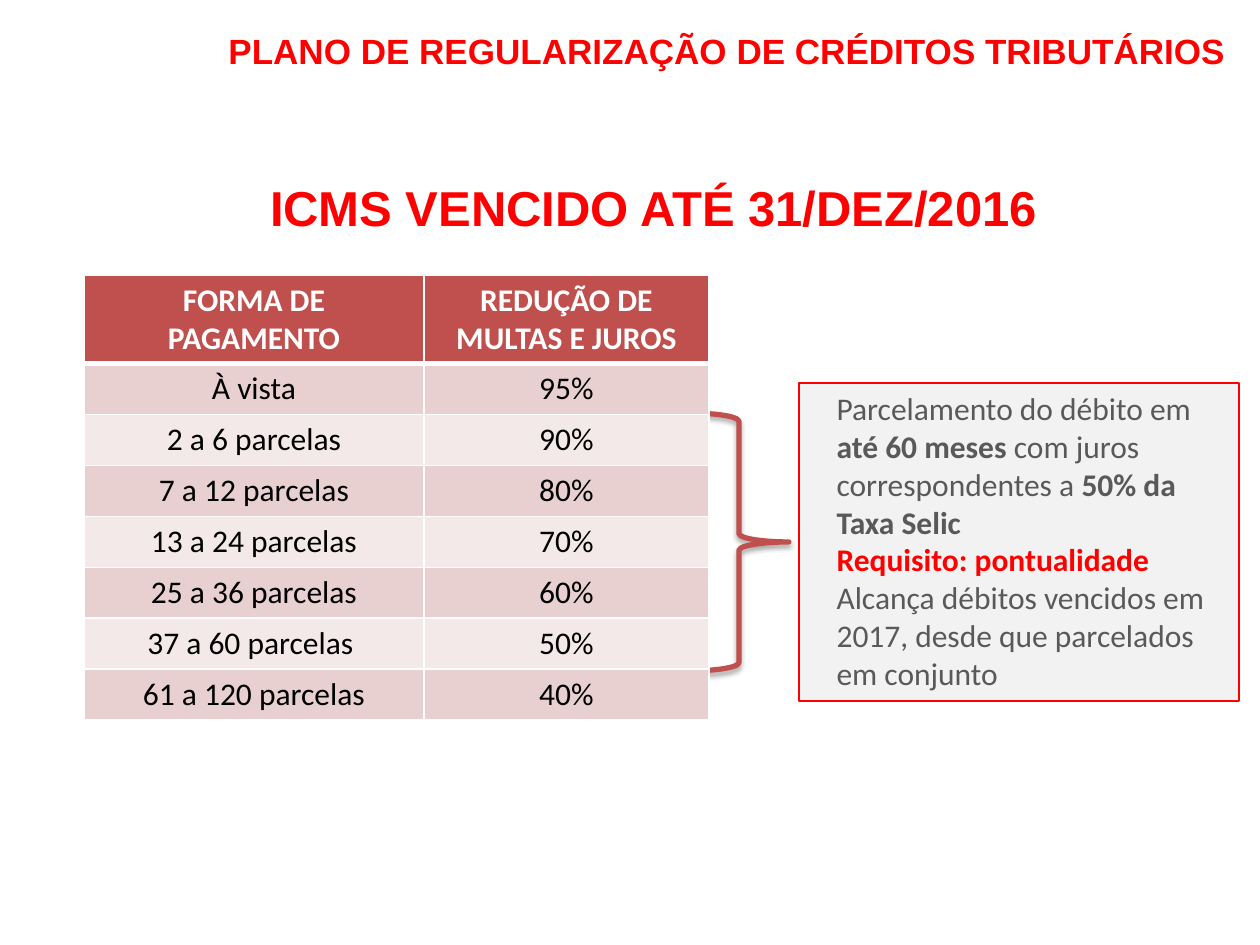
from lxml import etree
from pptx import Presentation
from pptx import util as u
from pptx.dml.color import RGBColor
from pptx.enum import shapes, text
from pptx.oxml import ns

PX = u.Inches(1) // 126
RED, BRICK, WHITE, BLACK, GREY = "FF0000", "C0504D", "FFFFFF", "000000", "595959"
BANDS = ("E8D0D0", "F4E9E9")
HEADERS = ("FORMA DE PAGAMENTO", "REDUÇÃO DE MULTAS E JUROS")
REDUCTIONS = (
    ("À vista", "95%"),
    ("2 a 6 parcelas", "90%"),
    ("7 a 12 parcelas", "80%"),
    ("13 a 24 parcelas", "70%"),
    ("25 a 36 parcelas", "60%"),
    ("37 a 60 parcelas ", "50%"),
    ("61 a 120 parcelas", "40%"),
)
# Each paragraph: colour, then (words, bold) spans
CONDITIONS = (
    (GREY, (("Parcelamento do débito em ", False), ("até 60 meses", True),
            (" com juros correspondentes a ", False), ("50% da Taxa Selic", True))),
    (RED, (("Requisito: pontualidade", True),)),
    (GREY, (("Alcança débitos vencidos em 2017, desde que parcelados em conjunto", False),)),
)


def px(*lengths):
    return [u.Emu(length * PX) for length in lengths]


def colour(value):
    return RGBColor.from_string(value)


def set_font(font, size, hue, name="Calibri", bold=None):
    font.size, font.name, font.bold = u.Pt(size), name, bold
    font.color.rgb = colour(hue)


def write_heading(shape, words, size, align, anchor):
    frame = shape.text_frame
    frame.word_wrap = True
    frame.vertical_anchor = anchor
    para = frame.paragraphs[0]
    para.text = words
    para.alignment = align
    set_font(para.font, size, RED, "Arial", True)


def add_preset(page, kind, bounds, line, width):
    shape = page.shapes.add_shape(kind, *px(*bounds))
    shape.shadow.inherit = False
    shape.line.color.rgb = colour(line)
    shape.line.width = u.Pt(width)
    return shape


def add_brace(page):
    brace = add_preset(page, shapes.MSO_SHAPE.RIGHT_BRACE, (689, 413, 100, 258), BRICK, 3)
    brace.fill.background()
    effects = brace.element.spPr.find(ns.qn("a:effectLst"))
    shadow = etree.SubElement(effects, ns.qn("a:outerShdw"), blurRad=str(u.Pt(3.1)),
                              dist=str(u.Pt(1.8)), dir="5400000", rotWithShape="0")
    tint = etree.SubElement(shadow, ns.qn("a:srgbClr"), val=BLACK)
    etree.SubElement(tint, ns.qn("a:alpha"), val="35000")


def add_conditions(page):
    box = add_preset(page, shapes.MSO_SHAPE.RECTANGLE, (799, 383, 440, 318), RED, 0.75)
    box.fill.solid()
    box.fill.fore_color.rgb = colour("F2F2F2")
    frame = box.text_frame
    frame.word_wrap = True
    frame.vertical_anchor = text.MSO_ANCHOR.TOP
    for index, (hue, spans) in enumerate(CONDITIONS):
        para = frame.add_paragraph() if index else frame.paragraphs[0]
        para.alignment = text.PP_ALIGN.LEFT
        para._p.get_or_add_pPr().set("marL", str(u.Inches(0.2)))
        set_font(para.font, 18, hue)
        for words, bold in spans:
            span = para.add_run()
            span.text = words
            span.font.bold = bold


def set_borders(cell, bottom):
    properties = cell._tc.get_or_add_tcPr()
    for side, width in (("L", 1), ("R", 1), ("T", 1), ("B", bottom)):
        line = etree.SubElement(properties, ns.qn(f"a:ln{side}"), w=str(u.Pt(width)))
        fill = etree.SubElement(line, ns.qn("a:solidFill"))
        etree.SubElement(fill, ns.qn("a:srgbClr"), val=WHITE)


def add_reductions(page):
    rows = (HEADERS,) + REDUCTIONS
    table = page.shapes.add_table(len(rows), 2, *px(84, 275, 625, 445)).table
    for column, width in zip(table.columns, px(340, 285)):
        column.width = width
    for index, values in enumerate(rows):
        header = index == 0
        table.rows[index].height = px(51 if index else 88)[0]
        for cell, value in zip(table.rows[index].cells, values):
            set_borders(cell, 3 if header else 1)
            cell.fill.solid()
            cell.fill.fore_color.rgb = colour(BRICK if header else BANDS[(index - 1) % 2])
            para = cell.text_frame.paragraphs[0]
            para.text = value
            para.alignment = text.PP_ALIGN.CENTER
            set_font(para.font, 18, WHITE if header else BLACK, bold=header)


def main():
    deck = Presentation()
    deck.slide_width, deck.slide_height = px(1260, 945)
    page = deck.slides.add_slide(deck.slide_layouts[5])

    # Title and subtitle
    title = page.shapes.title
    title.left, title.top, title.width, title.height = px(104, 6, 1134, 90)
    write_heading(title, "PLANO DE REGULARIZAÇÃO DE CRÉDITOS TRIBUTÁRIOS", 20,
                  text.PP_ALIGN.RIGHT, text.MSO_ANCHOR.MIDDLE)
    subtitle = page.shapes.add_textbox(*px(52, 171, 1203, 70))
    write_heading(subtitle, "ICMS VENCIDO ATÉ 31/DEZ/2016", 28,
                  text.PP_ALIGN.CENTER, text.MSO_ANCHOR.TOP)

    # Brace and conditions, with the table in front of the brace
    add_brace(page)
    add_conditions(page)
    add_reductions(page)
    deck.save("out.pptx")


if __name__ == "__main__":
    main()
